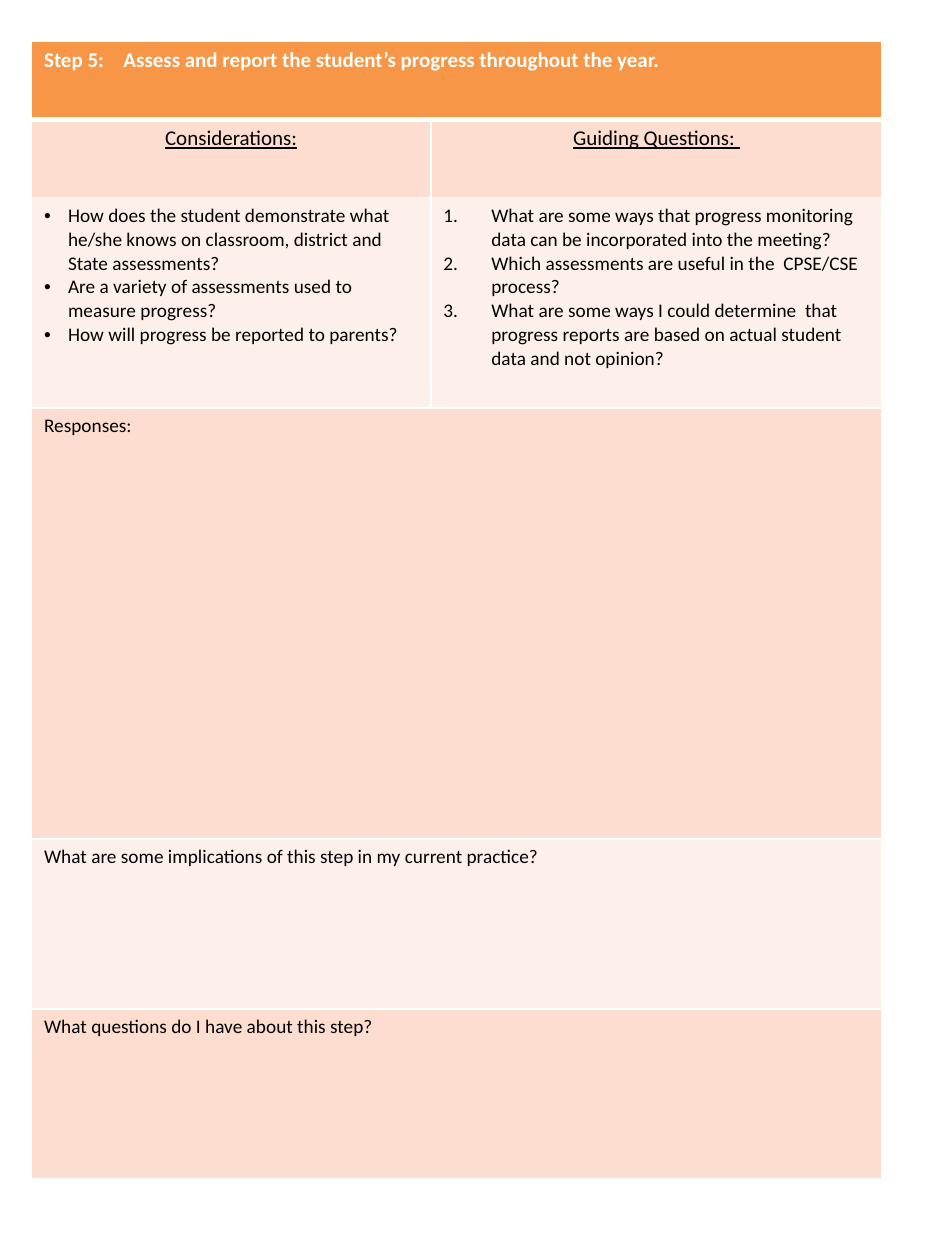
from dataclasses import dataclass

from lxml.etree import SubElement
from pptx import Presentation
from pptx.dml.color import RGBColor as RGB
from pptx.enum.text import PP_ALIGN as Align
from pptx.oxml.ns import qn
from pptx.util import Emu, Inches, Pt


@dataclass(frozen=True)
class Theme:
    font: str = "Calibri"
    white: str = "FFFFFF"
    black: str = "000000"
    orange: str = "F79646"
    peach: str = "FCDDCF"
    cream: str = "FDEFE9"
    heading: int = 12
    body: int = 11


T = Theme()
BLANK = 6
COLS = (3.17, 3.58)
ROWS = (0.62, 0.62, 1.67, 3.42, 1.35, 1.35)
LEFT, TOP = 0.25, 0.33
TITLE_TAB = 0.63

TITLE = "Step 5:\tAssess and report the student’s progress throughout the year."
HEADINGS = ("Considerations:", "Guiding Questions: ")
CONSIDERATIONS = (
    "How does the student demonstrate what he/she knows on classroom, district and State assessments?",
    "Are a variety of assessments used to measure progress?",
    "How will progress be reported to parents?",
)
QUESTIONS = (
    "What are some ways that progress monitoring data can be incorporated into the meeting?",
    "Which assessments are useful in the  CPSE/CSE process?",
    "What are some ways I could determine  that progress reports are based on actual student data and not opinion?",
)
PROMPTS = (
    "Responses:",
    "What are some implications of this step in my current practice?",
    "What questions do I have about this step?",
)


def style_cell(cell, row):
    """White rules, heavier under the title row, and banded fills."""
    tc_pr = cell._tc.get_or_add_tcPr()
    widths = {"L": 1, "R": 1, "T": 3 if row == 1 else 1, "B": 3 if row == 0 else 1}
    for side, width in widths.items():
        ln = SubElement(tc_pr, qn(f"a:ln{side}"), w=str(Pt(width)))
        SubElement(SubElement(ln, qn("a:solidFill")), qn("a:srgbClr"), val=T.white)
    cell.fill.solid()
    color = T.orange if row == 0 else (T.cream, T.peach)[row % 2]
    cell.fill.fore_color.rgb = RGB.from_string(color)


def write(cell, lines, size=T.body, color=T.black, bold=False, underline=False, align=Align.LEFT):
    """Fill a cell with one formatted paragraph per line."""
    tf = cell.text_frame
    tf.text = "\n".join(lines)
    for p in tf.paragraphs:
        p.alignment = align
        for r in p.runs:
            font = r.font
            font.name, font.size = T.font, Pt(size)
            font.bold, font.underline = bold, underline
            font.color.rgb = RGB.from_string(color)


def write_list(cell, lines, indent, tag, **marker):
    """Fill a cell with a bulleted or numbered list."""
    write(cell, lines)
    for p in cell.text_frame.paragraphs:
        p_pr = p._p.get_or_add_pPr()
        p_pr.set("marL", str(Inches(indent)))
        p_pr.set("indent", str(-Inches(indent)))
        SubElement(p_pr, qn("a:buFont"), typeface="Arial" if tag == "a:buChar" else "+mj-lt")
        SubElement(p_pr, qn(tag), **marker)


def add_tab_stop(p, position):
    tabs = SubElement(p._p.get_or_add_pPr(), qn("a:tabLst"))
    SubElement(tabs, qn("a:tab"), pos=str(Inches(position)), algn="l")


def add_grid(s):
    """Add the worksheet table with its column widths, row heights and merges."""
    table = s.shapes.add_table(
        len(ROWS), len(COLS), Inches(LEFT), Inches(TOP), Inches(sum(COLS)), Inches(sum(ROWS))
    ).table
    for column, width in zip(table.columns, COLS):
        column.width = Emu(Inches(width))
    for i, (row, height) in enumerate(zip(table.rows, ROWS)):
        row.height = Emu(Inches(height))
        for cell in row.cells:
            style_cell(cell, i)
    for i in (0, 3, 4, 5):
        table.cell(i, 0).merge(table.cell(i, 1))
    return table


def main():
    prs = Presentation()
    prs.slide_width, prs.slide_height = Inches(7.5), Inches(10)
    s = prs.slides.add_slide(prs.slide_layouts[BLANK])
    table = add_grid(s)

    # Title and column headings
    title = table.cell(0, 0)
    write(title, [TITLE], size=T.heading, color=T.white, bold=True)
    add_tab_stop(title.text_frame.paragraphs[0], TITLE_TAB)
    for col, heading in enumerate(HEADINGS):
        write(table.cell(1, col), [heading], size=T.heading, underline=True, align=Align.CENTER)

    # Considerations and guiding questions
    write_list(table.cell(2, 0), CONSIDERATIONS, 0.19, "a:buChar", char="•")
    write_list(table.cell(2, 1), QUESTIONS, 0.38, "a:buAutoNum", type="arabicPeriod")

    # Open areas for answers
    for row, prompt in enumerate(PROMPTS, start=3):
        write(table.cell(row, 0), [prompt])

    prs.save("out.pptx")


if __name__ == "__main__":
    main()
